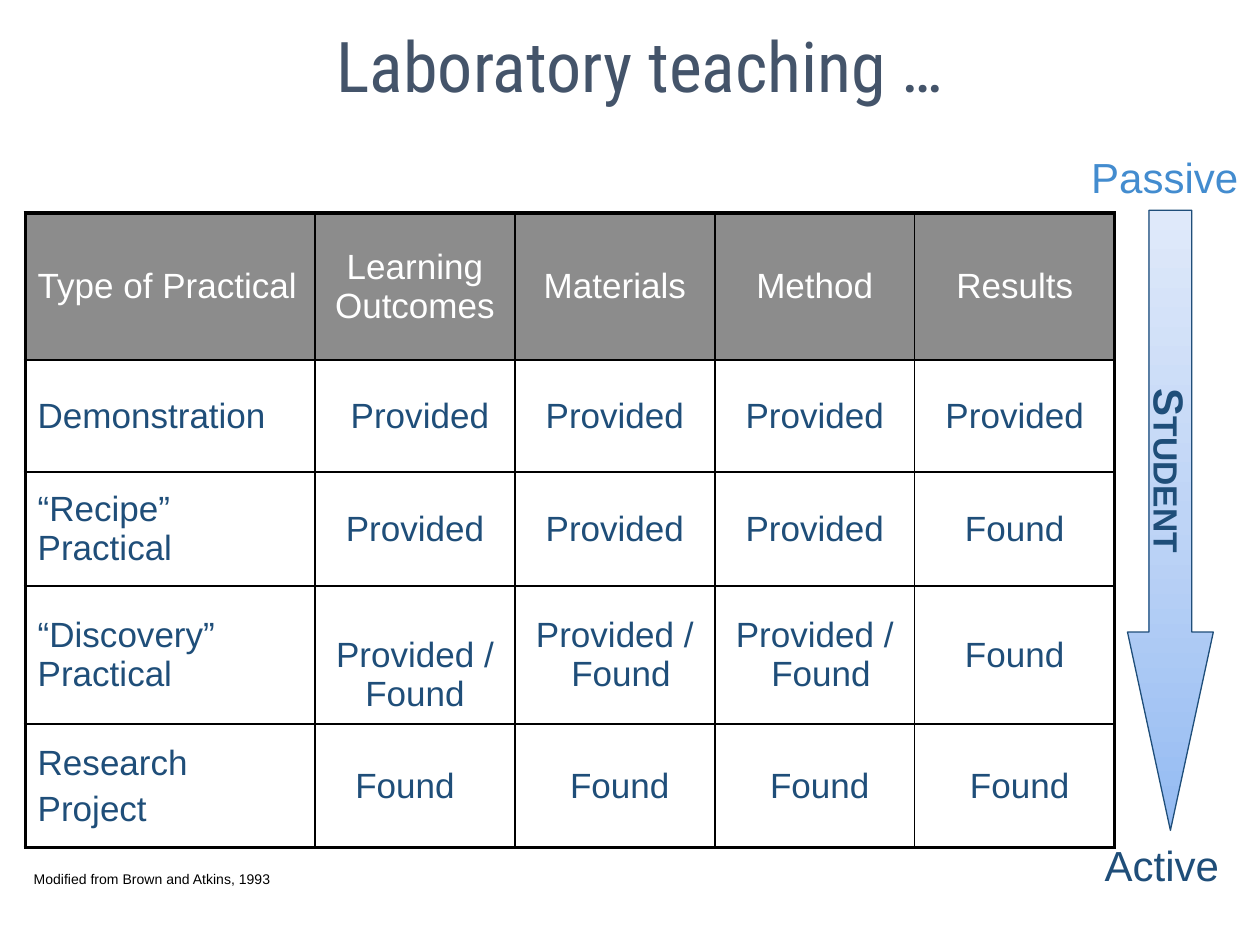
"""Build a slide comparing types of laboratory practical by what is given to students."""
from copy import deepcopy

from lxml import etree
from pptx import Presentation
from pptx.dml.color import RGBColor
from pptx.enum.shapes import MSO_SHAPE
from pptx.enum.text import MSO_ANCHOR, PP_ALIGN
from pptx.oxml.ns import qn
from pptx.util import Cm, Pt

LEFT, CENTER = PP_ALIGN.LEFT, PP_ALIGN.CENTER
TOP, MIDDLE = MSO_ANCHOR.TOP, MSO_ANCHOR.MIDDLE
DOWN_ARROW = MSO_SHAPE.DOWN_ARROW
NAVY, BLACK, WHITE, GRAY = "1F4E79", "000000", "FFFFFF", "8C8C8C"

ROWS = [
    ["Type of Practical", "Learning Outcomes", "Materials", "Method", "Results"],
    ["Demonstration", "Provided", "Provided", "Provided", "Provided"],
    ["“Recipe” Practical", "Provided", "Provided", "Provided", "Found"],
    ["“Discovery” Practical", "Provided /\vFound", "Provided /\vFound",
     "Provided /\vFound", "Found"],
    ["Research\nProject", "Found", "Found", "Found", "Found"],
]
COLUMN_WIDTHS = [5.84] + [4.03] * 4
ROW_HEIGHTS = [2.97, 2.26, 2.29, 2.79, 2.49]
TABLE_LEFT, TABLE_TOP = 0.51, 4.29
CELL_MARGINS = {"margin_left": 0.25, "margin_right": 0.25,
                "margin_top": 0.13, "margin_bottom": 0.13}
SHIFTED_CELLS = {
    (1, 1): {"margin_left": 0.45},
    (3, 1): {"margin_top": 0.92},
    (4, 1): {"margin_right": 0.65},
    (4, 2): {"margin_left": 0.45},
    (4, 3): {"margin_left": 0.45},
    (4, 4): {"margin_left": 0.45},
}
HANGING_CELLS = [(3, 2), (3, 3)]

LABELS = [
    ("Passive", (21.64, 2.92, 3.68, 1.3), CENTER,
     {"size": 24, "name": "Arial", "color": "438CCF"}),
    ("Active", (22.02, 16.79, 3.12, 1.3), LEFT,
     {"size": 24, "name": "Arial", "color": NAVY}),
    ("Modified from Brown and Atkins, 1993", (0.43, 17.42, 5.36, 0.61), LEFT,
     {"size": 8, "name": "Arial", "color": BLACK}),
    ("Laboratory teaching …", (3.71, 0.33, 18.39, 3.18), CENTER,
     {"size": 40, "name": "Roboto Condensed", "color": "44546A"}),
]
ARROW_BOX = (22.73, 4.24, 1.73, 12.5)
ARROW_STOPS = [(0, "94BBF2"), (0.5, "BED4F6"), (1, "DFE9FA")]
ARROW_FONT = {"size": 24, "name": "Arial", "color": NAVY, "bold": True}


def rgb(value):
    """Return the colour for a hex string."""
    return RGBColor.from_string(value)


def set_text(frame, text, alignment, font_format):
    """Fill a text frame with one paragraph per line of text."""
    frame.text = text
    for index, paragraph in enumerate(frame.paragraphs):
        paragraph.alignment = alignment
        if index:
            paragraph.space_before = Pt(4)
        for run in paragraph.runs:
            for name, value in font_format.items():
                if name == "color":
                    run.font.color.rgb = rgb(value)
                else:
                    setattr(run.font, name, Pt(value) if name == "size" else value)


def add_label(slide, text, box, alignment, font_format):
    """Add a wrapped text box."""
    frame = slide.shapes.add_textbox(*map(Cm, box)).text_frame
    frame.word_wrap = True
    frame.vertical_anchor = TOP
    set_text(frame, text, alignment, font_format)


def add_borders(cell, row, column):
    """Draw thick lines on the table's edge and thin lines inside."""
    outer = {"lnL": column == 0, "lnR": column == len(COLUMN_WIDTHS) - 1,
             "lnT": row == 0, "lnB": row == len(ROWS) - 1}
    properties = cell._tc.get_or_add_tcPr()
    for side, thick in outer.items():
        line = etree.SubElement(properties, qn(f"a:{side}"),
                                w=str(Pt(2.25 if thick else 1)))
        fill = etree.SubElement(line, qn("a:solidFill"))
        etree.SubElement(fill, qn("a:srgbClr"), val=BLACK)


def add_practical_table(slide):
    """Add the table of practical types."""
    table = slide.shapes.add_table(
        len(ROWS), len(COLUMN_WIDTHS), Cm(TABLE_LEFT), Cm(TABLE_TOP),
        Cm(sum(COLUMN_WIDTHS)), Cm(sum(ROW_HEIGHTS))).table
    table.horz_banding = False
    table.first_row = False
    for column, width in zip(table.columns, COLUMN_WIDTHS):
        column.width = Cm(width)
    for row, height in zip(table.rows, ROW_HEIGHTS):
        row.height = Cm(height)
    for row, texts in enumerate(ROWS):
        for column, text in enumerate(texts):
            cell = table.cell(row, column)
            add_borders(cell, row, column)
            if row == 0:
                cell.fill.solid()
                cell.fill.fore_color.rgb = rgb(GRAY)
            else:
                cell.fill.background()
            cell.vertical_anchor = MIDDLE
            margins = CELL_MARGINS | SHIFTED_CELLS.get((row, column), {})
            for name, value in margins.items():
                setattr(cell, name, Cm(value))
            set_text(cell.text_frame, text, CENTER if column else LEFT,
                     {"size": 20, "name": "Arial", "color": NAVY if row else WHITE})
            if (row, column) in HANGING_CELLS:
                properties = cell.text_frame.paragraphs[0]._p.get_or_add_pPr()
                properties.set("marL", str(Cm(0.25)))
                properties.set("indent", str(Cm(-0.25)))


def add_student_arrow(slide):
    """Add the shaded arrow running from passive to active."""
    arrow = slide.shapes.add_shape(DOWN_ARROW, *map(Cm, ARROW_BOX))
    arrow.shadow.inherit = False
    arrow.adjustments[0] = 0.5
    arrow.adjustments[1] = 2.31
    arrow.fill.gradient()
    arrow.fill.gradient_angle = 90
    stop_list = arrow._element.spPr.find(f".//{qn('a:gsLst')}")
    stop_list.insert(1, deepcopy(stop_list[0]))
    for stop, (position, color) in zip(arrow.fill.gradient_stops, ARROW_STOPS):
        stop.position = position
        stop.color.rgb = rgb(color)
    arrow.line.color.rgb = rgb(NAVY)
    arrow.line.width = Pt(0.75)
    frame = arrow.text_frame
    frame.word_wrap = False
    frame.vertical_anchor = MIDDLE
    frame._txBody.bodyPr.set("vert", "vert")
    set_text(frame, "Student", CENTER, ARROW_FONT)
    frame.paragraphs[0].runs[0]._r.get_or_add_rPr().set("cap", "small")


def main():
    """Build and save the presentation."""
    presentation = Presentation()
    presentation.slide_width, presentation.slide_height = Cm(25.4), Cm(19.05)
    slide = presentation.slides.add_slide(presentation.slide_layouts[6])
    add_student_arrow(slide)
    add_practical_table(slide)
    for label in LABELS:
        add_label(slide, *label)
    presentation.save("out.pptx")


if __name__ == "__main__":
    main()
